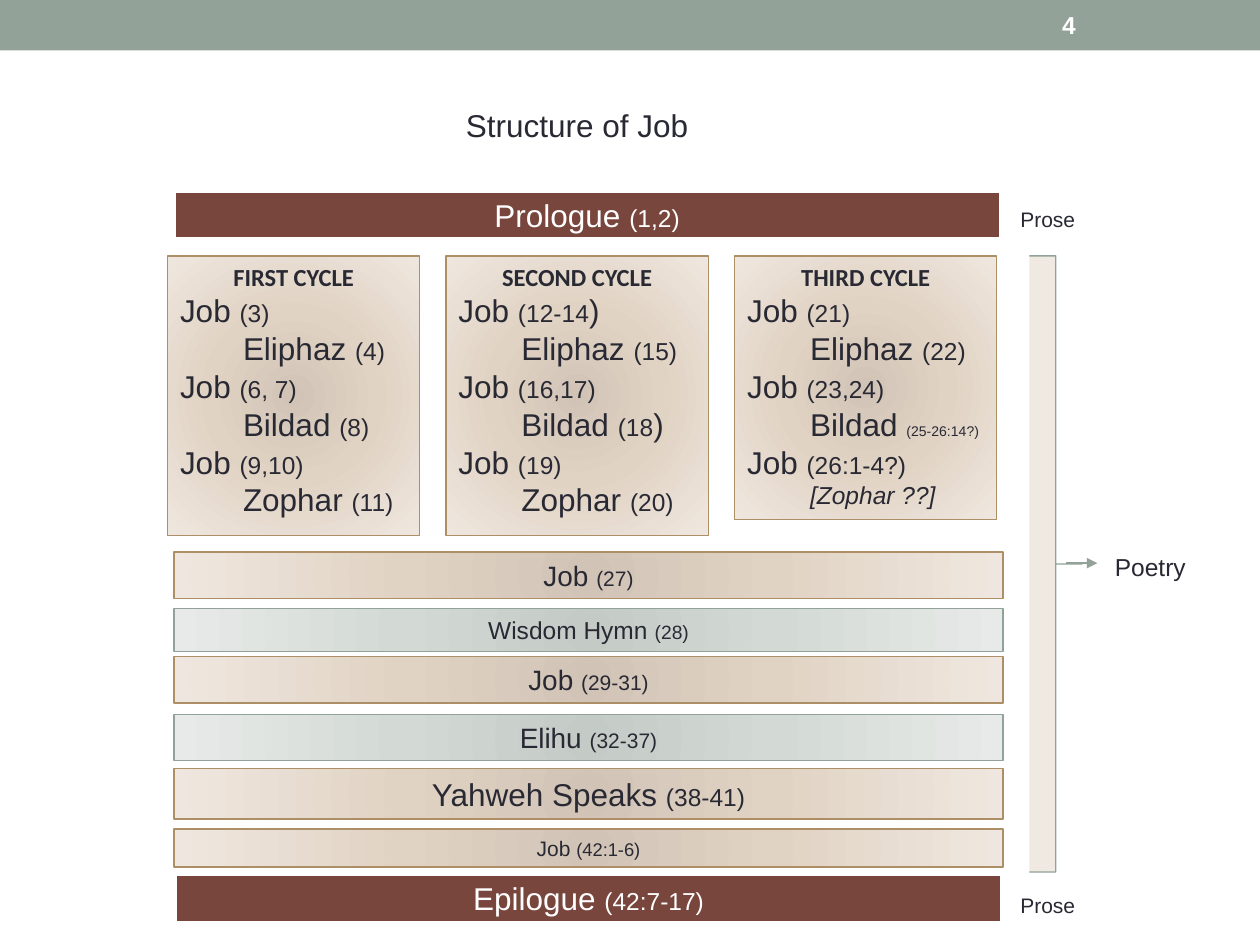
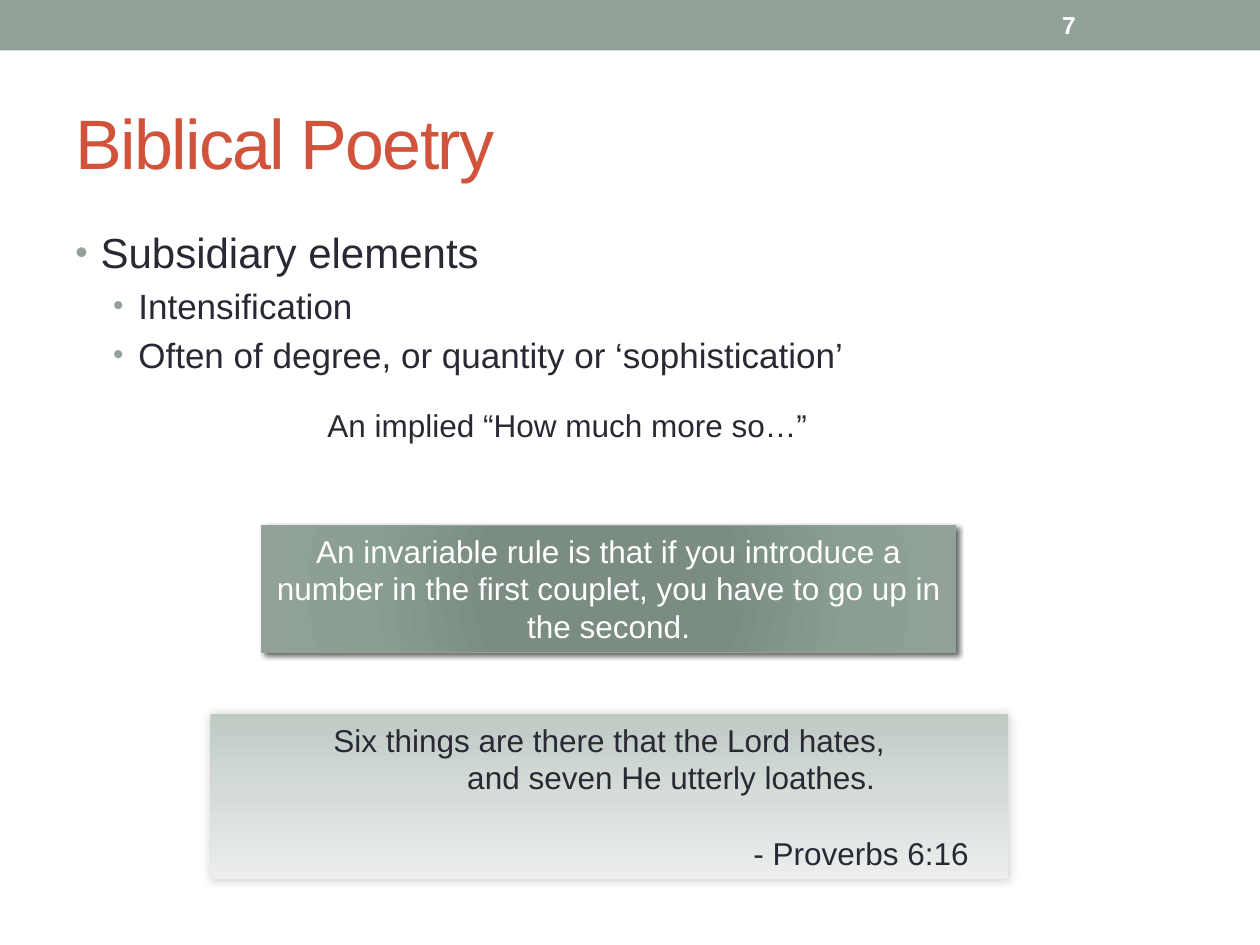
from pptx import Presentation
from pptx.dml.color import RGBColor
from pptx.enum.dml import MSO_LINE
from pptx.enum.shapes import MSO_CONNECTOR, MSO_SHAPE
from pptx.enum.text import MSO_ANCHOR, MSO_AUTO_SIZE, PP_ALIGN
from pptx.oxml import parse_xml
from pptx.oxml.ns import nsdecls, qn
from pptx.util import Pt

RECT, BRACE = MSO_SHAPE.RECTANGLE, MSO_SHAPE.RIGHT_BRACE
STRAIGHT, SOLID = MSO_CONNECTOR.STRAIGHT, MSO_LINE.SOLID
TOP, MIDDLE, FIXED = MSO_ANCHOR.TOP, MSO_ANCHOR.MIDDLE, MSO_AUTO_SIZE.NONE
LEFT, CENTER = PP_ALIGN.LEFT, PP_ALIGN.CENTER

COLORS = {"sage": "93A299", "ink": "292934", "white": "FFFFFF", "brown": "79463D",
          "tan": "AD8F67", "cream": "EFE9E1", "red": "D2533C", "black": "000000"}
ROUND = '<a:path path="circle"><a:fillToRect l="100000" t="100000" r="100000" b="100000"/></a:path>'
DOWN = '<a:lin ang="5400000" scaled="0"/>'
BLENDS = {
    "sand": ([(0, "D1C4B6"), (45, "E1D3C4"), (100, "EFE7DF")], ROUND),
    "mist": ([(0, "C4CAC6"), (45, "D3DAD6"), (100, "E7EAE8")], ROUND),
    "moss": ([(0, "7B8E82"), (34, "7B8D83"), (70, "8A9E92"), (100, "93A299")], ROUND),
    "fade": ([(0, "BFCAC3"), (50, "D6DDD9"), (100, "EBEEEC")], DOWN),
}


def box(slide, place, fill=None, line=None, width=0.75, kind=RECT, shadow=None):
    place = [Pt(n) for n in place]
    if fill:
        shape = slide.shapes.add_shape(kind, *place)
        shape.shadow.inherit = False
        shape.fill.solid()
        props = shape.fill._xPr
        if fill in BLENDS:
            stops, way = BLENDS[fill]
            marks = "".join(f'<a:gs pos="{at * 1000}"><a:srgbClr val="{tint}"/></a:gs>'
                            for at, tint in stops)
            blend = parse_xml(f'<a:gradFill {nsdecls("a")} rotWithShape="1">'
                              f'<a:gsLst>{marks}</a:gsLst>{way}</a:gradFill>')
            props.replace(props.find(qn("a:solidFill")), blend)
        else:
            shape.fill.fore_color.rgb = RGBColor.from_string(COLORS[fill])
        if line:
            shape.line.color.rgb = RGBColor.from_string(COLORS[line])
            shape.line.width = Pt(width)
        else:
            shape.line.fill.background()
        if shadow:
            alpha, blur, dist, angle = shadow
            props.find(qn("a:effectLst")).append(parse_xml(
                f'<a:outerShdw {nsdecls("a")} blurRad="{Pt(blur)}" dist="{Pt(dist)}" '
                f'dir="{angle * 60000}" algn="tl" rotWithShape="0">'
                f'<a:srgbClr val="{COLORS["black"]}"><a:alpha val="{alpha * 1000}"/>'
                '</a:srgbClr></a:outerShdw>'))
    else:
        shape = slide.shapes.add_textbox(*place)
    shape.text_frame.word_wrap = True
    shape.text_frame.vertical_anchor = TOP
    return shape


def write(para, parts, color="ink", align=LEFT, indent=0, font="Arial"):
    para.alignment = align
    if indent:
        para._p.get_or_add_pPr().set("marL", str(Pt(indent)))
    for text, size in parts:
        run = para.add_run()
        run.text = text
        run.font.size = Pt(size)
        run.font.name = font
        run.font.color.rgb = RGBColor.from_string(COLORS[color])


deck = Presentation()
deck.slide_width, deck.slide_height = Pt(720), Pt(540)

heads = [
    ("Structure of Job", "4", (146.9, 56.9, 365.8, 30.2), 18, "ink", CENTER, TOP, 0),
    ("Biblical Poetry", "7", (36, 41.8, 648, 77.8), 40, "red", LEFT, MIDDLE, -100),
]
slides = []
for text, number, place, size, color, align, anchor, gap in heads:
    slide = deck.slides.add_slide(deck.slide_layouts[5])
    slides.append(slide)
    box(slide, (0, 0, 720, 28.8), "sage")
    label = box(slide, (599.8, 1.4, 84.2, 25.9)).text_frame
    label.vertical_anchor = MIDDLE
    write(label.paragraphs[0], [(number, 14)], "white")
    label.paragraphs[0].runs[0].font.bold = True
    title = slide.shapes.title
    title.left, title.top, title.width, title.height = [Pt(n) for n in place]
    frame = title.text_frame
    frame.auto_size, frame.word_wrap, frame.vertical_anchor = FIXED, True, anchor
    write(frame.paragraphs[0], [(text, size)], color, align)
    frame.paragraphs[0].runs[0].font._element.set("spc", str(gap))

job, poem = slides

bars = [
    (98.6, 108.7, 28.8, "brown", "Prologue ", 18, "(1,2)", 14),
    (99.4, 315.4, 26.6, "sand", "Job ", 16, "(27)", 12),
    (99.4, 347.8, 24.5, "mist", "Wisdom Hymn ", 14, "(28)", 11),
    (99.4, 375.1, 26.6, "sand", "Job ", 16, "(29-31)", 12),
    (99.4, 408.2, 26.6, "mist", "Elihu ", 16, "(32-37)", 12),
    (99.4, 439.2, 28.8, "sand", "Yahweh Speaks ", 18, "(38-41)", 14),
    (99.4, 473.8, 21.6, "sand", "Job ", 12, "(42:1-6)", 10.5),
    (99.4, 499, 28.8, "brown", "Epilogue ", 18, "(42:7-17)", 14),
]
edges = {"brown": ("white", 3.5), "sand": ("tan", 0.75), "mist": ("sage", 0.75)}
for left, top, height, fill, name, size, verse, small in bars:
    bar = box(job, (left, top, 473.8, height), fill, *edges[fill])
    color = "white" if fill == "brown" else "ink"
    write(bar.text_frame.paragraphs[0], [(name, size), (verse, small)], color, CENTER)

cycles = [
    ("FIRST CYCLE", 95.8, 144, 159.8,
     [[("(3)", 14)], [("(4)", 14)], [("(6, 7)", 14)], [("(8)", 14)],
      [("(9,10)", 14)], [("(11)", 14)]]),
    ("SECOND CYCLE", 254.9, 149.8, 159.8,
     [[("(12-14", 14), (")", 18)], [("(15)", 14)], [("(16,17)", 14)],
      [("(18", 14), (")", 18)], [("(19)", 14)], [("(20)", 14)]]),
    ("THIRD CYCLE", 419.8, 149.8, 150.5,
     [[("(21)", 14)], [("(22)", 14)], [("(23,24)", 14)], [("(25-26:14?)", 8)],
      [("(26:1-4?)", 14)], []]),
]
names = ["Job ", "Eliphaz ", "Job ", "Bildad ", "Job ", "Zophar "]
for head, left, width, height, verses in cycles:
    frame = box(job, (left, 146.2, width, height), "sand", "tan").text_frame
    write(frame.paragraphs[0], [(head, 14)], align=CENTER, font="Calibri")
    frame.paragraphs[0].runs[0].font.bold = True
    for row, (name, verse) in enumerate(zip(names, verses)):
        para = frame.add_paragraph()
        parts = [(name, 18)] + verse if verse else [("[Zophar ??]", 14)]
        write(para, parts, indent=row % 2 * 36)
        para.runs[0].font.italic = not verse

brace = box(job, (588.2, 146.2, 30.2, 352.1), "cream", "sage", kind=BRACE)
brace.adjustments[0] = 0
brace.adjustments[1] = 0.5
arrow = job.shapes.add_connector(STRAIGHT, Pt(609.1), Pt(321.8), Pt(627.1), Pt(321.8))
arrow.line.color.rgb = RGBColor.from_string(COLORS["sage"])
arrow.line.width = Pt(0.75)
arrow.line.dash_style = SOLID
arrow.line._get_or_add_ln().append(parse_xml(f'<a:tailEnd {nsdecls("a")} type="triangle"/>'))
arrow._element.spPr.append(parse_xml(f'<a:effectLst {nsdecls("a")}/>'))

notes = [
    (job, "Poetry", 14, (630, 311.8, 72, 24.5)),
    (job, "Prose", 12, (576, 114.5, 72, 21.6)),
    (job, "Prose", 12, (576, 506.2, 72, 21.6)),
    (poem, "An implied “How much more so…”", 18, (180, 228.2, 300.2, 30.2)),
]
for slide, text, size, place in notes:
    write(box(slide, place).text_frame.paragraphs[0], [(text, size)])

points = [
    ("Subsidiary elements", 24, 14.4),
    ("Intensification", 20, 36),
    ("Often of degree, or quantity or ‘sophistication’", 20, 36),
]
frame = box(poem, (36, 126, 648, 95.8)).text_frame
for row, (text, size, indent) in enumerate(points):
    para = frame.add_paragraph() if row else frame.paragraphs[0]
    write(para, [(text, size)], indent=indent)
    para.space_before = Pt(size * 0.2)
    props = para._p.get_or_add_pPr()
    props.set("indent", str(Pt(-14.4)))
    for mark in (f'buClr {nsdecls("a")}><a:srgbClr val="{COLORS["sage"]}"/></a:buClr>',
                 f'buSzPct {nsdecls("a")} val="85000"/>',
                 f'buFont {nsdecls("a")} typeface="Arial"/>',
                 f'buChar {nsdecls("a")} char="•"/>'):
        props.append(parse_xml("<a:" + mark))

rule = box(poem, (149.8, 300.2, 396, 72.7), "moss", "sage", shadow=(60, 3, 2, 45))
write(rule.text_frame.paragraphs[0],
      [("An invariable rule is that if you introduce a number in the first couplet, "
        "you have to go up in the second.", 18)], "white", CENTER)

verses = [
    ("Six things are there that the Lord hates,", 0, 0),
    ("and seven He utterly loathes.", 71, 0),
    ("- Proverbs 6:16", 288, 21.5),
]
frame = box(poem, (120.2, 408.2, 455.8, 94.3), "fade", shadow=(20, 6, 0, 315)).text_frame
for row, (text, indent, gap) in enumerate(verses):
    para = frame.add_paragraph() if row else frame.paragraphs[0]
    write(para, [(text, 18)], align=CENTER, indent=indent)
    para.space_before = Pt(gap)

deck.save("out.pptx")
